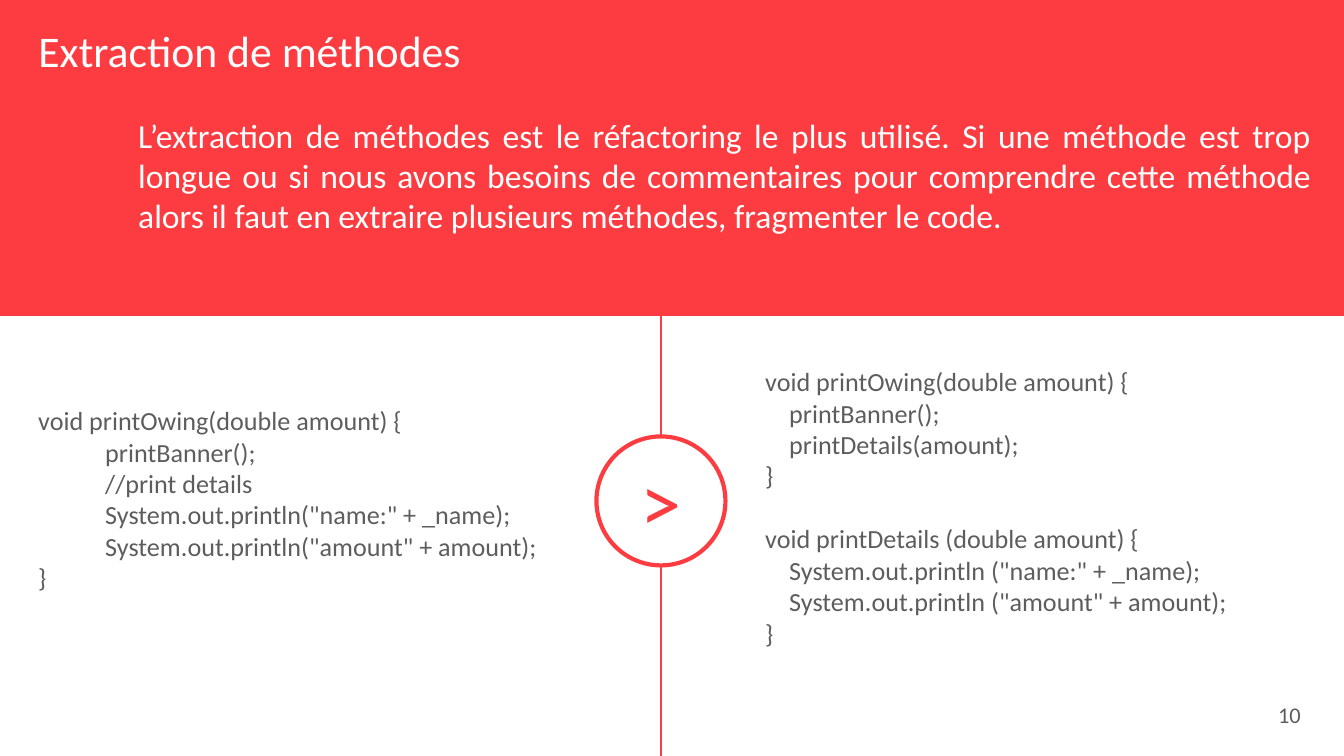
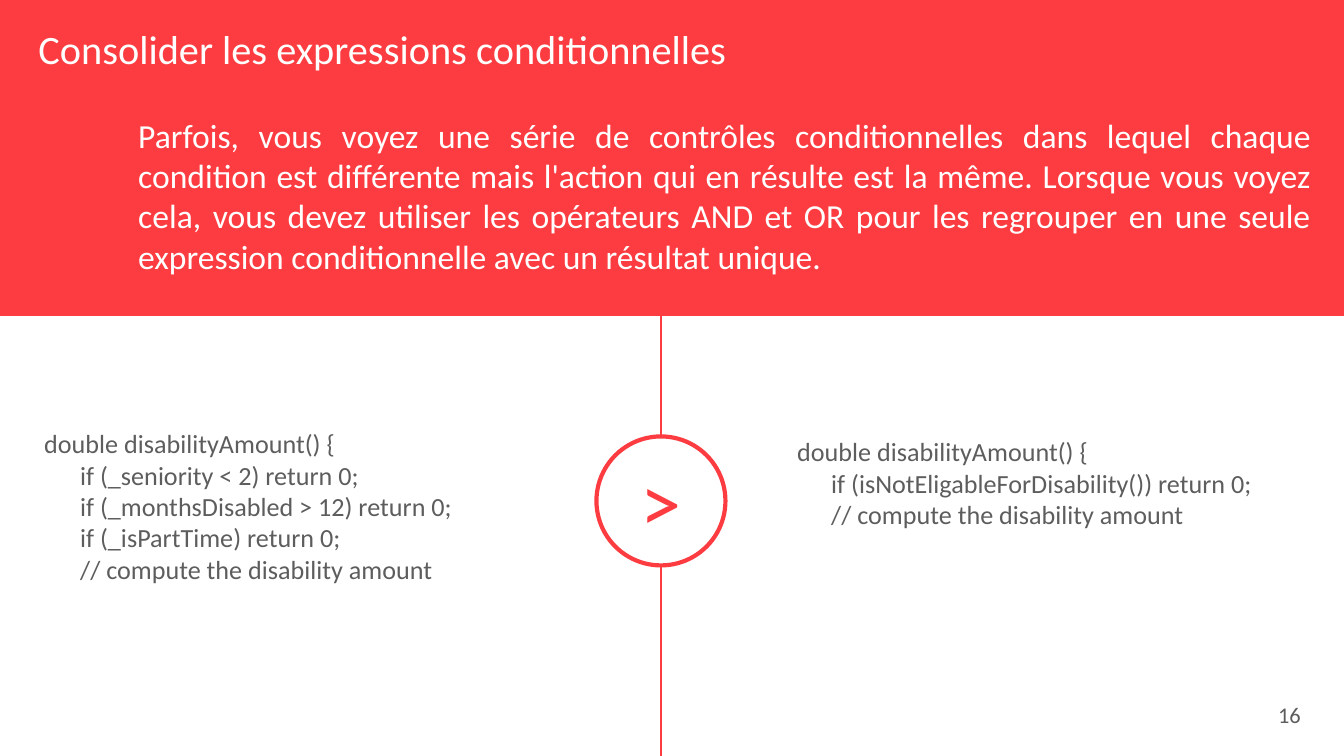
from pptx import Presentation
from pptx.dml.color import RGBColor
from pptx.enum.shapes import MSO_CONNECTOR as Link, MSO_SHAPE as Shape
from pptx.enum.text import MSO_ANCHOR as Anchor, MSO_AUTO_SIZE as Fit, PP_ALIGN as Align
from pptx.oxml.ns import qn
from pptx.util import Pt
from lxml.etree import SubElement

# Content: code blocks are functions, each a head, indented body lines and an optional end
SLIDES = [
    dict(
        title="Extraction de méthodes", size=23.4, page="10",
        text="L’extraction de méthodes est le réfactoring le plus utilisé. Si une "
             "méthode est trop longue ou si nous avons besoins de commentaires pour "
             "comprendre cette méthode alors il faut en extraire plusieurs méthodes, "
             "fragmenter le code.",
        codes=[
            dict(box=(25, 398, 571, 211), indent=67, funcs=[
                ("void printOwing(double amount) {",
                 ["printBanner();",
                  "//print details",
                  'System.out.println("name:" + _name);',
                  'System.out.println("amount" + amount);'], "}"),
            ]),
            dict(box=(752, 359, 592, 298), indent=24, funcs=[
                ("void printOwing(double amount) {",
                 ["printBanner();", "printDetails(amount);"], "}"),
                ("void printDetails (double amount) {",
                 ['System.out.println ("name:" + _name);',
                  'System.out.println ("amount" + amount);'], "}"),
            ]),
        ],
    ),
    dict(
        title="Consolider les expressions conditionnelles", size=21.6, page="16",
        text="Parfois, vous voyez une série de contrôles conditionnelles dans lequel "
             "chaque condition est différente mais l'action qui en résulte est la même. "
             "Lorsque vous voyez cela, vous devez utiliser les opérateurs AND et OR pour "
             "les regrouper en une seule expression conditionnelle avec un résultat unique.",
        codes=[
            dict(box=(31, 421, 565, 172), indent=36, funcs=[
                ("double disabilityAmount() {",
                 ["if (_seniority < 2) return 0;",
                  "if (_monthsDisabled > 12) return 0;",
                  "if (_isPartTime) return 0;",
                  "// compute the disability amount"], None),
            ]),
            dict(box=(784, 429, 539, 110), indent=34, funcs=[
                ("double disabilityAmount() {",
                 ["if (isNotEligableForDisability()) return 0;",
                  "// compute the disability amount"], None),
            ]),
        ],
    ),
]

# Shared style
COLORS = dict(red="FC3C40", gray="5D5D5D", white="FFFFFF")
FONT = "Calibri"
WIDTH, HEIGHT = 1344, 756
BAND = 316            # height of the red band
MID_X, MID_Y = 661, 501
DISC = 129            # diameter of the badge
GAP = 17              # points between two functions


def px(n):
    return round(n * 914400 / 134.4)


def color(name):
    return RGBColor.from_string(COLORS[name])


def style(para, size, tint, align=Align.LEFT):
    para.alignment = align
    font = para.font
    font.name, font.size = FONT, Pt(size)
    font.color.rgb = color(tint)


def add_text(slide, box, text, size, tint, align, anchor=Anchor.TOP):
    frame = slide.shapes.add_textbox(*map(px, box)).text_frame
    frame.word_wrap = True
    frame.vertical_anchor = anchor
    frame.text = text
    style(frame.paragraphs[0], size, tint, align)
    return frame


def add_shape(slide, kind, box, fill):
    shape = slide.shapes.add_shape(kind, *map(px, box))
    shape.shadow.inherit = False
    shape.fill.solid()
    shape.fill.fore_color.rgb = color(fill)
    return shape


def add_code(slide, box, indent, funcs):
    rows = []
    for i, (head, body, end) in enumerate(funcs):
        rows.append((head, 0, GAP if i else 0))
        rows += [(line, indent, 0) for line in body]
        if end:
            rows.append((end, 0, 0))
    frame = slide.shapes.add_textbox(*map(px, box)).text_frame
    frame.word_wrap = True
    for i, (line, left, gap) in enumerate(rows):
        para = frame.add_paragraph() if i else frame.paragraphs[0]
        para.text = line
        style(para, 14, "gray")
        para.space_before = Pt(gap)
        para._p.get_or_add_pPr().set("marL", str(px(left)))


def add_split(slide):
    # Divider
    line = slide.shapes.add_connector(
        Link.STRAIGHT, px(MID_X), px(BAND), px(MID_X), px(HEIGHT))
    line.line.color.rgb = color("red")
    line.line.width = Pt(1)
    SubElement(line.element.spPr, qn("a:effectLst"))
    # Badge
    disc = add_shape(slide, Shape.OVAL,
                     (MID_X - DISC / 2, MID_Y - DISC / 2, DISC, DISC), "white")
    disc.line.color.rgb = color("red")
    disc.line.width = Pt(2.25)
    frame = disc.text_frame
    frame.margin_left = frame.margin_right = frame.margin_top = frame.margin_bottom = 0
    frame.vertical_anchor = Anchor.BOTTOM
    frame.text = ">"
    para = frame.paragraphs[0]
    style(para, 44, "red", Align.CENTER)
    para.line_spacing = 0.7


def add_head(slide, text, size):
    title = slide.shapes.title
    title.left, title.top, title.width, title.height = map(px, (25, 17, 1200, 85))
    frame = title.text_frame
    frame.text = text
    frame.word_wrap = True
    frame.auto_size = Fit.NONE
    frame.vertical_anchor = Anchor.TOP
    style(frame.paragraphs[0], size, "white")
    # The band goes behind the title
    band = add_shape(slide, Shape.RECTANGLE, (0, 0, WIDTH, BAND), "red")
    band.line.fill.background()
    title.element.addprevious(band.element)


def main():
    deck = Presentation()
    deck.slide_width, deck.slide_height = px(WIDTH), px(HEIGHT)
    for item in SLIDES:
        slide = deck.slides.add_slide(deck.slide_layouts[5])
        add_head(slide, item["title"], item["size"])
        add_text(slide, (125, 108, 1200, 176), item["text"], 18, "white", Align.JUSTIFY)
        add_split(slide)
        for code in item["codes"]:
            add_code(slide, **code)
        add_text(slide, (1001, 695, 313, 40), item["page"], 12, "gray",
                 Align.RIGHT, Anchor.MIDDLE)
    deck.save("out.pptx")


if __name__ == "__main__":
    main()
